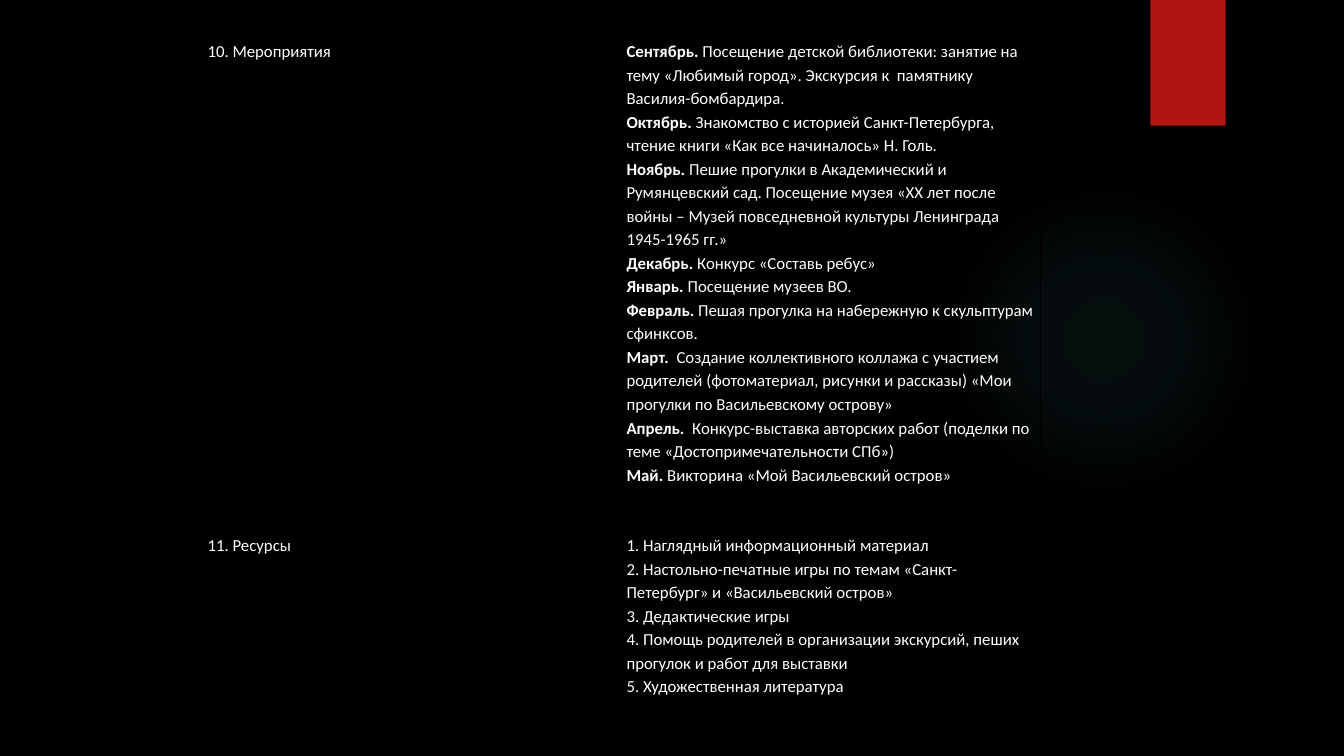
from lxml import etree
from pptx import Presentation
from pptx.dml.color import RGBColor
from pptx.enum.shapes import MSO_SHAPE
from pptx.oxml import parse_xml
from pptx.oxml.ns import nsdecls, qn
from pptx.util import Cm, Pt

OVAL, RECTANGLE = MSO_SHAPE.OVAL, MSO_SHAPE.RECTANGLE
COLORS = {"back": "000000", "text": "FFFFFF", "ribbon": "B01513", "glow": "50B9C1"}
GLOW_STOPS = [(0, 7), (36, 6), (69, 0)]  # position and opacity, percent

EVENTS = [
    ("Сентябрь. ", "Посещение детской библиотеки: занятие на тему «Любимый город». "
                   "Экскурсия к  памятнику Василия-бомбардира."),
    ("Октябрь. ", "Знакомство с историей Санкт-Петербурга, чтение книги "
                  "«Как все начиналось» Н. Голь."),
    ("Ноябрь. ", "Пешие прогулки в Академический и Румянцевский сад. Посещение музея "
                 "«XX лет после войны – Музей повседневной культуры Ленинграда 1945-1965 гг.»"),
    ("Декабрь. ", "Конкурс «Составь ребус»"),
    ("Январь. ", "Посещение музеев ВО."),
    ("Февраль. ", "Пешая прогулка на набережную к скульптурам сфинксов."),
    ("Март.  ", "Создание коллективного коллажа с участием родителей (фотоматериал, "
                "рисунки и рассказы) «Мои прогулки по Васильевскому острову»"),
    ("Апрель.  ", "Конкурс-выставка авторских работ (поделки по теме "
                  "«Достопримечательности СПб»)"),
    ("Май. ", "Викторина «Мой Васильевский остров»"),
]
RESOURCES = [
    "1. Наглядный информационный материал",
    "2. Настольно-печатные игры по темам «Санкт-Петербург» и «Васильевский остров»",
    "3. Дедактические игры",
    "4. Помощь родителей в организации экскурсий, пеших прогулок и работ для выставки",
    "5. Художественная литература",
]
# Each cell is a list of paragraphs: (bold lead, text)
ROWS = [
    [[("", "10. Мероприятия")], EVENTS],
    [[("", "11. Ресурсы")], [("", line) for line in RESOURCES]],
]


class PlanPage:
    font_name, font_size, line_spacing = "Calibri", Pt(12), 1.15

    def __init__(self, deck):
        self.page = deck.slides.add_slide(deck.slide_layouts[6])
        fill = self.page.background.fill
        fill.solid()
        fill.fore_color.rgb = RGBColor.from_string(COLORS["back"])

    def shape(self, kind, left, top, width, height, color):
        shape = self.page.shapes.add_shape(kind, Cm(left), Cm(top), Cm(width), Cm(height))
        shape.shadow.inherit = False
        shape.line.fill.background()
        shape.fill.solid()
        shape.fill.fore_color.rgb = RGBColor.from_string(color)
        return shape

    def glow(self, left, top, size, color):
        """Add a circle whose colour fades out from its centre."""
        properties = self.shape(OVAL, left, top, size, size, color)._element.spPr
        stops = "".join(
            f'<a:gs pos="{position * 1000}"><a:srgbClr val="{color}">'
            f'<a:alpha val="{opacity * 1000}"/></a:srgbClr></a:gs>'
            for position, opacity in GLOW_STOPS)
        gradient = parse_xml(
            f'<a:gradFill {nsdecls("a")}><a:gsLst>{stops}</a:gsLst><a:path path="circle">'
            '<a:fillToRect l="50000" t="50000" r="50000" b="50000"/></a:path></a:gradFill>')
        properties.replace(properties.find(qn("a:solidFill")), gradient)

    def table(self, left, top, column_width, row_heights, rows):
        frame = self.page.shapes.add_table(
            len(rows), len(rows[0]), Cm(left), Cm(top),
            Cm(column_width * len(rows[0])), Cm(sum(row_heights)))
        table = frame.table
        table.first_row = table.horz_banding = False
        for row, height, contents in zip(table.rows, row_heights, rows):
            row.height = Cm(height)
            for cell, lines in zip(row.cells, contents):
                self.cell(cell, lines)

    def cell(self, cell, lines):
        cell.margin_left = cell.margin_right = Cm(0.13)
        cell.margin_top = cell.margin_bottom = 0
        self.borders(cell)
        cell.fill.background()
        for index, (lead, text) in enumerate(lines):
            paragraphs = cell.text_frame
            para = paragraphs.add_paragraph() if index else paragraphs.paragraphs[0]
            para.line_spacing = self.line_spacing
            para.font.name, para.font.size = self.font_name, self.font_size
            para.font.color.rgb = RGBColor.from_string(COLORS["text"])
            if lead:
                span = para.add_run()
                span.text, span.font.bold = lead, True
            para.add_run().text = text

    def borders(self, cell):
        properties = cell._tc.get_or_add_tcPr()
        for side in "LRTB":
            line = etree.SubElement(properties, qn(f"a:ln{side}"), w=str(Pt(1)))
            fill = etree.SubElement(line, qn("a:solidFill"))
            etree.SubElement(fill, qn("a:srgbClr"), val=COLORS["back"])


def main():
    deck = Presentation()
    deck.slide_width, deck.slide_height = Cm(33.87), Cm(19.05)
    plan = PlanPage(deck)
    plan.glow(23.9, 4.65, 7.82, COLORS["glow"])
    plan.shape(RECTANGLE, 28.99, 0, 1.9, 3.17, COLORS["ribbon"])
    plan.table(5.1, 0.97, 10.56, [12.45, 3.9], ROWS)
    deck.save("out.pptx")


if __name__ == "__main__":
    main()
